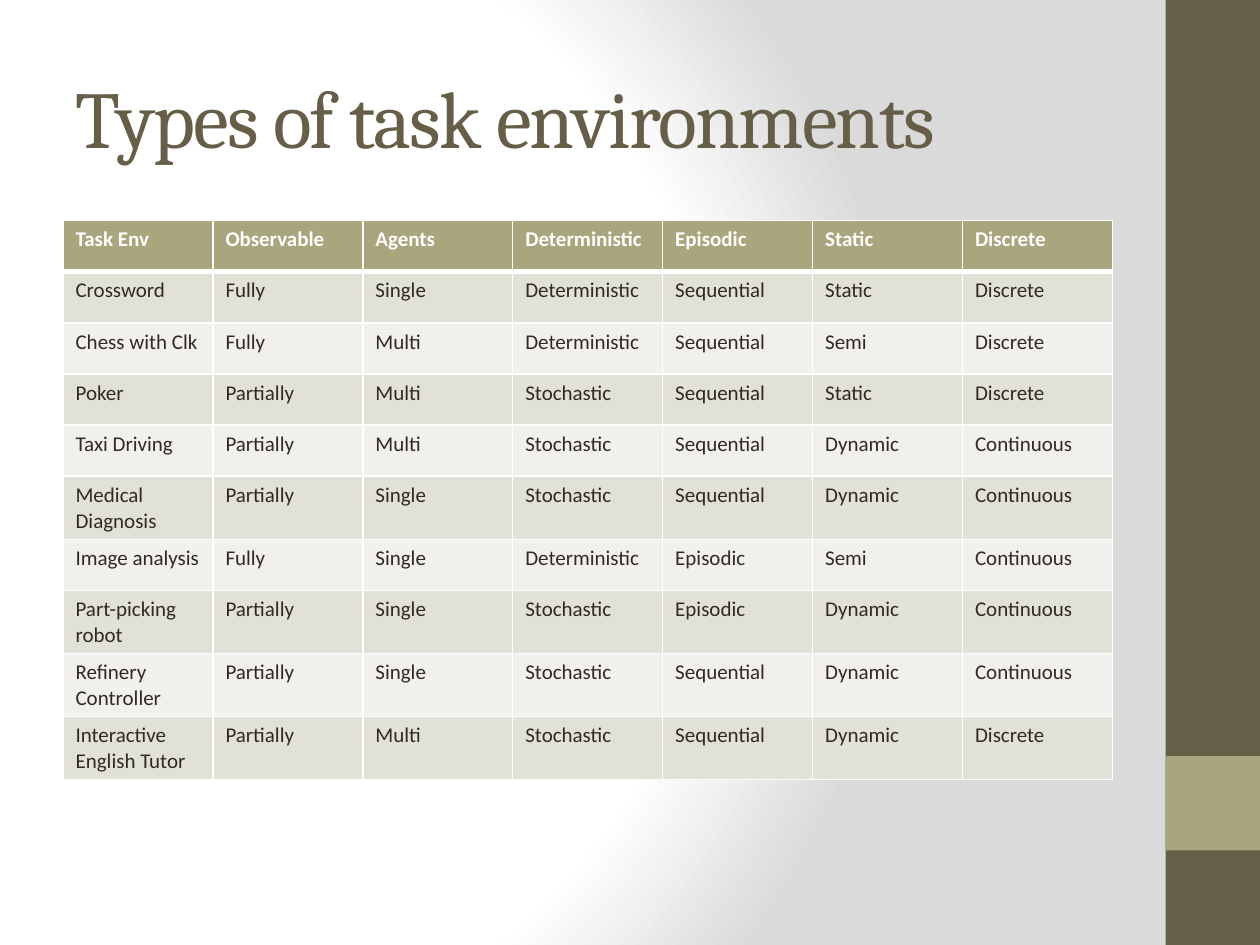
from lxml.etree import SubElement
from pptx import Presentation
from pptx.dml.color import RGBColor
from pptx.enum.shapes import MSO_SHAPE
from pptx.enum.text import MSO_ANCHOR
from pptx.oxml import parse_xml
from pptx.oxml.ns import nsdecls, qn
from pptx.util import Inches, Pt

UNIT = 0.25
BROWN, OLIVE, INK, WHITE = "675E47", "A9A57C", "2F2B20", "FFFFFF"
BANDS = ("F1F0EC", "E2E1D7")
GRADIENT = ((0, WHITE), (75, WHITE), (100, "DADADA"))
HEADERS = ("Task Env", "Observable", "Agents", "Deterministic", "Episodic", "Static", "Discrete")
ENVIRONMENTS = (
    ("Crossword", "Fully", "Single", "Deterministic", "Sequential", "Static", "Discrete"),
    ("Chess with Clk", "Fully", "Multi", "Deterministic", "Sequential", "Semi", "Discrete"),
    ("Poker", "Partially", "Multi", "Stochastic", "Sequential", "Static", "Discrete"),
    ("Taxi Driving", "Partially", "Multi", "Stochastic", "Sequential", "Dynamic", "Continuous"),
    ("Medical Diagnosis", "Partially", "Single", "Stochastic", "Sequential", "Dynamic", "Continuous"),
    ("Image analysis", "Fully", "Single", "Deterministic", "Episodic", "Semi", "Continuous"),
    ("Part-picking robot", "Partially", "Single", "Stochastic", "Episodic", "Dynamic", "Continuous"),
    ("Refinery Controller", "Partially", "Single", "Stochastic", "Sequential", "Dynamic", "Continuous"),
    ("Interactive English Tutor", "Partially", "Multi", "Stochastic", "Sequential", "Dynamic", "Discrete"),
)


def rgb(color):
    return RGBColor.from_string(color)


def grid(*cells):
    return [Inches(n * UNIT) for n in cells]


def format_run(r, font, size, color, bold=False):
    r.font.name = font
    r.font.size = Pt(size)
    r.font.color.rgb = rgb(color)
    r.font.bold = bold


def set_background(s):
    s.background.fill.solid()
    bg_pr = s.background._cSld.bg.bgPr
    stops = "".join(
        f'<a:gs pos="{pos * 1000}"><a:srgbClr val="{color}"/></a:gs>' for pos, color in GRADIENT
    )
    gradient = parse_xml(
        f'<a:gradFill rotWithShape="1" {nsdecls("a")}><a:gsLst>{stops}</a:gsLst>'
        '<a:path path="circle"><a:fillToRect l="20000" t="50000" r="100000" b="50000"/></a:path>'
        '</a:gradFill>'
    )
    bg_pr.replace(bg_pr.find(qn("a:solidFill")), gradient)


def add_block(s, box, color):
    sp = s.shapes.add_shape(MSO_SHAPE.RECTANGLE, *grid(*box))
    sp.shadow.inherit = False
    sp.fill.solid()
    sp.fill.fore_color.rgb = rgb(color)
    sp.line.fill.background()


def add_title(s, box, text):
    tf = s.shapes.add_textbox(*grid(*box)).text_frame
    tf.word_wrap = True
    tf.vertical_anchor = MSO_ANCHOR.MIDDLE
    tf.text = text
    r = tf.paragraphs[0].runs[0]
    format_run(r, "Cambria", 46, BROWN)
    r.font._element.set("spc", "-100")


def set_borders(cell, top, bottom):
    tc_pr = cell._tc.get_or_add_tcPr()
    for side, width in (("L", 1), ("R", 1), ("T", top), ("B", bottom)):
        ln = SubElement(tc_pr, qn(f"a:ln{side}"), w=str(Pt(width)))
        SubElement(SubElement(ln, qn("a:solidFill")), qn("a:srgbClr"), val=WHITE)


def add_environment_table(s, box):
    rows = (HEADERS,) + ENVIRONMENTS
    table = s.shapes.add_table(len(rows), len(HEADERS), *grid(*box)).table
    for i, row in enumerate(rows):
        header = i == 0
        for j, text in enumerate(row):
            cell = table.cell(i, j)
            set_borders(cell, 3 if i == 1 else 1, 3 if header else 1)
            cell.fill.solid()
            cell.fill.fore_color.rgb = rgb(OLIVE if header else BANDS[i % 2])
            cell.text_frame.text = text
            r = cell.text_frame.paragraphs[0].runs[0]
            format_run(r, "Calibri", 12, WHITE if header else INK, header)


def main():
    prs = Presentation()
    prs.slide_width, prs.slide_height = grid(40, 30)
    s = prs.slides.add_slide(prs.slide_layouts[6])
    set_background(s)
    add_block(s, (37, 0, 3, 30), BROWN)
    add_block(s, (37, 24, 3, 3), OLIVE)
    add_title(s, (2, 1.2, 33.32, 5), "Types of task environments")
    add_environment_table(s, (2, 7, 33.32, 16.24))
    prs.save("out.pptx")


if __name__ == "__main__":
    main()
